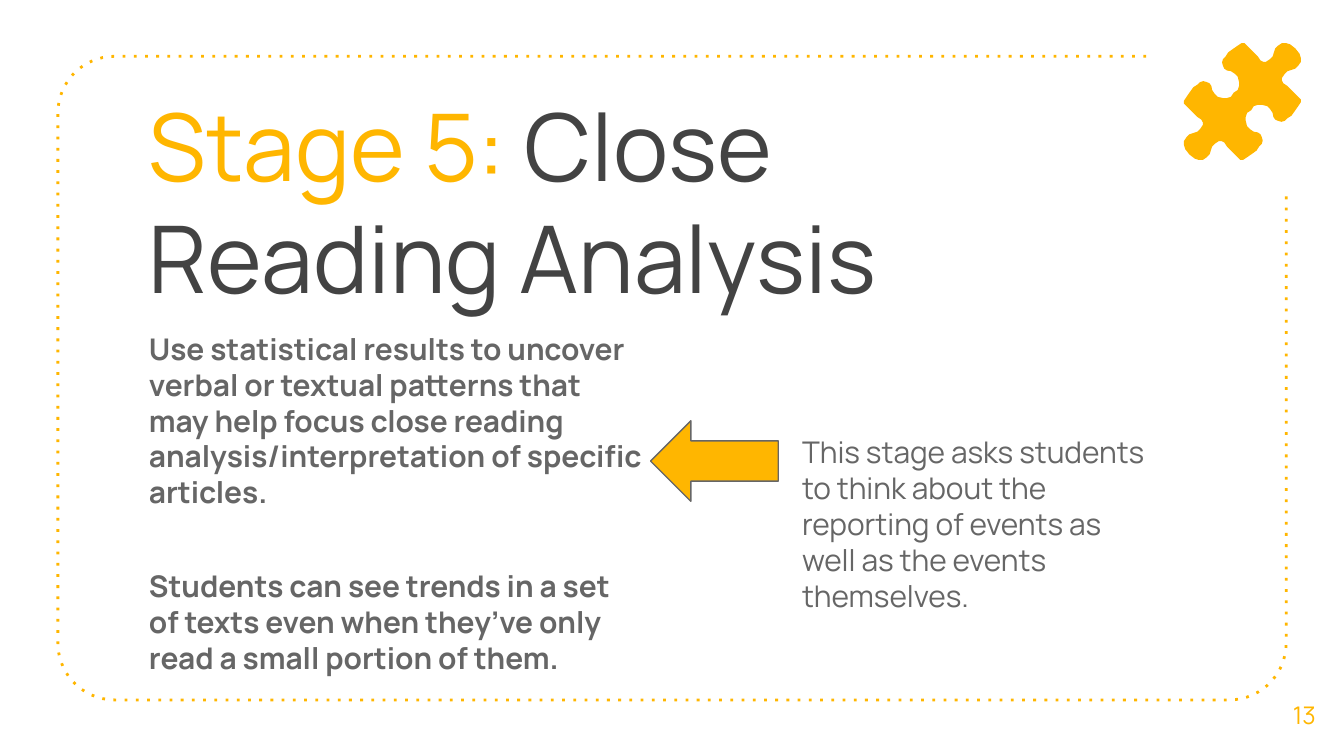
from math import cos, radians, sin

from lxml import etree
from pptx import Presentation
from pptx.dml.color import RGBColor
from pptx.enum.shapes import MSO_SHAPE
from pptx.enum.text import MSO_ANCHOR, PP_ALIGN
from pptx.oxml.ns import qn
from pptx.util import Pt

YELLOW = RGBColor(0xFF, 0xB6, 0x00)
DARK = RGBColor(0x43, 0x43, 0x43)
GRAY = RGBColor(0x66, 0x66, 0x66)
FONT = "Manrope"
LEFT_ARROW = MSO_SHAPE.LEFT_ARROW
TOP, MIDDLE = MSO_ANCHOR.TOP, MSO_ANCHOR.MIDDLE
LEFT, CENTER = PP_ALIGN.LEFT, PP_ALIGN.CENTER

# A quarter of the puzzle piece, from a notch to the tip of a knob,
# measured from the centre of the piece.
PUZZLE_CENTER = (665.6, 54.4)
PUZZLE_QUARTER = [
    (-4.7, -4.7), (-6.1, -2.5), (-8.3, -1.8), (-10.4, -1.8), (-13.3, -2.5),
    (-14.8, -4), (-16.2, -6.1), (-16.6, -8.3), (-17.6, -9.7), (-19.1, -10.4),
    (-20.9, -10.9), (-22.7, -10.4), (-24.1, -9), (-26.3, -7.6), (-28.4, -4.7),
    (-29.9, -2.5), (-31.3, -0.4), (-31.3, 1.1), (-29.9, 2.5), (-27.7, 4.7),
    (-24.1, 8.3), (-22, 9.7), (-21.2, 11.2), (-21.2, 12.6), (-22.7, 14.8),
    (-24.1, 16.2), (-26.3, 16.9), (-28.4, 17.6), (-29.9, 19.1), (-31.3, 21.2),
    (-31.3, 23.4), (-30.6, 25.6), (-28.4, 28.4),
]


def puzzle_points():
    """Mirror the quarter across the diagonal, then turn that half around."""
    half = PUZZLE_QUARTER + [(-y, -x) for x, y in reversed(PUZZLE_QUARTER)]
    whole = half + [(-x, -y) for x, y in half]
    center_x, center_y = PUZZLE_CENTER
    return [(center_x + x, center_y + y) for x, y in whole]


def arc(center_x, center_y, radius, start):
    """Points of a quarter circle, running anticlockwise on the slide."""
    angles = [radians(start - step) for step in range(0, 91, 6)]
    return [(center_x + radius * cos(a), center_y + radius * sin(a)) for a in angles]


def frame_points():
    """Rounded frame, open at the top right corner for the puzzle piece."""
    left, top, right, bottom, radius = 31, 30.2, 689, 375, 30.4
    return [
        (614, top),
        *arc(left + radius, top + radius, radius, 270),
        *arc(left + radius, bottom - radius, radius, 180),
        *arc(right - radius, bottom - radius, radius, 90),
        (right, 105),
    ]


class SlideWriter:
    def __init__(self, slide):
        self.shapes = slide.shapes

    def paint(self, shape, fill=None, line=None, width=0.75):
        shape.shadow.inherit = False
        if fill is None:
            shape.fill.background()
        else:
            shape.fill.solid()
            shape.fill.fore_color.rgb = fill
        if line is None:
            shape.line.fill.background()
        else:
            shape.line.color.rgb = line
            shape.line.width = Pt(width)

    def outline(self, points, closed, **style):
        start, *others = [(Pt(x), Pt(y)) for x, y in points]
        builder = self.shapes.build_freeform(*start, scale=1.0)
        builder.add_line_segments(others, close=closed)
        shape = builder.convert_to_shape()
        self.paint(shape, **style)
        return shape

    def dotted_outline(self, points, color, width):
        shape = self.outline(points, closed=False, line=color, width=width)
        line = shape._element.spPr.find(qn("a:ln"))
        etree.SubElement(line, qn("a:prstDash")).set("val", "dot")

    def arrow(self, box, fill, line):
        shape = self.shapes.add_shape(LEFT_ARROW, *map(Pt, box))
        self.paint(shape, fill=fill, line=line)

    def text(self, box, paragraphs, size, bold=False, before=(0,),
             anchor=TOP, align=LEFT):
        """Each paragraph is a list of (text, color) runs."""
        frame = self.shapes.add_textbox(*map(Pt, box)).text_frame
        frame.word_wrap = True
        frame.vertical_anchor = anchor
        frame.margin_left = frame.margin_right = Pt(7.2)
        frame.margin_top = frame.margin_bottom = Pt(7.2)
        for index, (runs, space) in enumerate(zip(paragraphs, before)):
            paragraph = frame.add_paragraph() if index else frame.paragraphs[0]
            paragraph.alignment = align
            paragraph.space_before = Pt(space)
            paragraph.font.name = FONT
            paragraph.font.size = Pt(size)
            paragraph.font.bold = bold
            for content, color in runs:
                run = paragraph.add_run()
                run.text = content
                run.font.color.rgb = color


def main():
    presentation = Presentation()
    presentation.slide_width, presentation.slide_height = Pt(720), Pt(405)
    writer = SlideWriter(presentation.slides.add_slide(presentation.slide_layouts[6]))

    writer.dotted_outline(frame_points(), YELLOW, 1.5)
    writer.text(
        (72.7, 169.9, 279.4, 213.1),
        [
            [("Use statistical results to uncover verbal or textual patterns that "
              "may help focus close reading analysis/interpretation of specific "
              "articles.", GRAY)],
            [("Students can see trends in a set of texts even when they’ve only "
              "read a small portion of them.", GRAY)],
        ],
        16, bold=True, before=(6, 31.2),
    )
    writer.text(
        (72.7, 40.3, 540.7, 141.1),
        [[("Stage 5:", YELLOW), (" Close Reading Analysis", DARK)]],
        50,
    )
    writer.text(
        (422.6, 225.4, 200.9, 127.4),
        [[("This stage asks students to think about the reporting of events as "
           "well as the events themselves.", GRAY)]],
        16, before=(6,),
    )
    writer.text((677.5, 361.4, 42.5, 43.2), [[("13", YELLOW)]], 13,
                anchor=MIDDLE, align=CENTER)
    writer.outline(puzzle_points(), closed=True, fill=YELLOW)
    writer.arrow((348.5, 225.4, 68.4, 43.2), YELLOW, GRAY)

    presentation.save("out.pptx")


if __name__ == "__main__":
    main()
